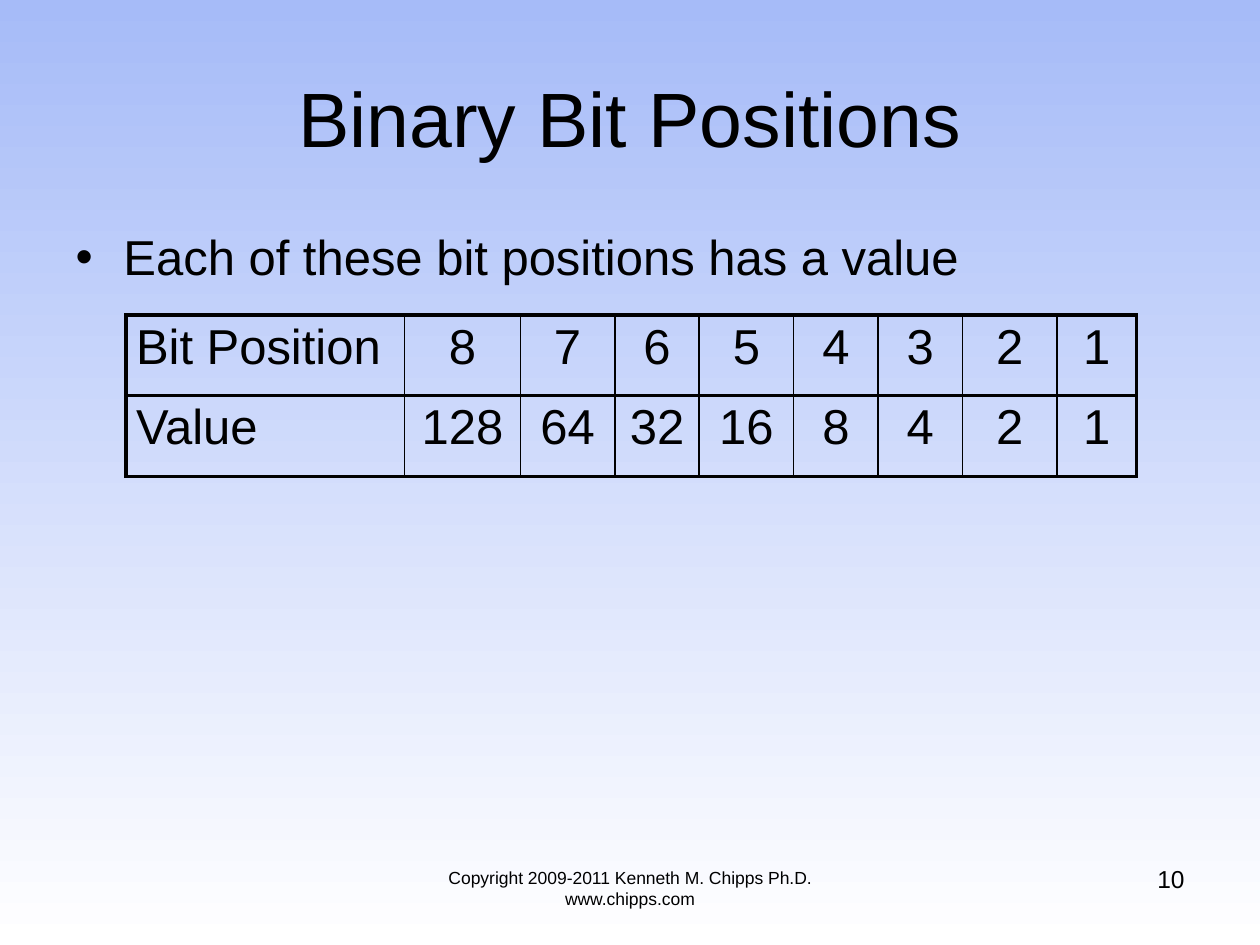
from lxml import etree
from pptx import Presentation
from pptx import util as u
from pptx.dml.color import RGBColor
from pptx.enum import text
from pptx.oxml.ns import qn

ALIGN = text.PP_ALIGN
ANCHOR = text.MSO_ANCHOR
HEAVY, LIGHT = 2.25, 1


def color(value):
    return RGBColor.from_string(value)


def set_attributes(target, values):
    for name, value in values.items():
        setattr(target, name, value)


def place(shape, left, top, width, height):
    set_attributes(shape, {
        "left": u.Inches(left), "top": u.Inches(top),
        "width": u.Inches(width), "height": u.Inches(height),
    })


def add_bullet(para, indent):
    """Give the paragraph a round bullet with a hanging indent."""
    props = para._p.get_or_add_pPr()
    props.set("marL", str(u.Inches(indent)))
    props.set("indent", str(-u.Inches(indent)))
    etree.SubElement(props, qn("a:buChar"), char="•")


def set_borders(cell, widths, ink):
    """Draw the cell borders; widths are points for left, right, top, bottom."""
    props = cell._tc.get_or_add_tcPr()
    for index, (side, width) in enumerate(zip("LRTB", widths)):
        line = etree.Element(qn(f"a:ln{side}"), w=str(u.Pt(width)))
        fill = etree.SubElement(line, qn("a:solidFill"))
        etree.SubElement(fill, qn("a:srgbClr"), val=ink)
        props.insert(index, line)


class SlideBuilder:
    font = "Arial"
    ink = "000000"

    def __init__(self, deck):
        self.page = deck.slides.add_slide(deck.slide_layouts[1])

    def background(self, top, bottom):
        fill = self.page.background.fill
        fill.gradient()
        fill.gradient_angle = 270
        for stop, shade in zip(fill.gradient_stops, (top, bottom)):
            stop.color.rgb = color(shade)

    def add_words(self, frame, words, size, align=ALIGN.LEFT):
        para = frame.paragraphs[0]
        para.alignment = align
        span = para.add_run()
        span.text = words
        set_attributes(span.font, {"name": self.font, "size": u.Pt(size), "bold": False})
        span.font.color.rgb = color(self.ink)
        return para

    def title(self, words, bounds):
        shape = self.page.shapes.title
        place(shape, *bounds)
        shape.text_frame.vertical_anchor = ANCHOR.MIDDLE
        self.add_words(shape.text_frame, words, 44, ALIGN.CENTER)

    def body(self, words, bounds):
        shape = self.page.placeholders[1]
        place(shape, *bounds)
        add_bullet(self.add_words(shape.text_frame, words, 28), 0.38)

    def text_box(self, words, bounds, size, align):
        box = self.page.shapes.add_textbox(*map(u.Inches, bounds))
        box.text_frame.word_wrap = True
        self.add_words(box.text_frame, words, size, align)

    def table(self, rows, left, top, column_widths, row_height):
        frame = self.page.shapes.add_table(
            len(rows), len(column_widths), u.Inches(left), u.Inches(top),
            u.Inches(sum(column_widths)), u.Inches(row_height * len(rows)))
        table = frame.table
        set_attributes(table, {"first_row": False, "horz_banding": False})
        for column, width in zip(table.columns, column_widths):
            column.width = u.Inches(width)
        last = len(column_widths) - 1
        for row, values in zip(table.rows, rows):
            row.height = u.Inches(row_height)
            for index, (cell, value) in enumerate(zip(row.cells, values)):
                set_attributes(cell, {
                    "margin_left": u.Inches(0.08), "margin_right": u.Inches(0.08),
                    "margin_top": u.Inches(0.04), "margin_bottom": u.Inches(0.04),
                })
                self.add_words(cell.text_frame, str(value), 28,
                               ALIGN.CENTER if index else ALIGN.LEFT)
                cell.fill.background()
                left_width = LIGHT if index else HEAVY
                right_width = HEAVY if index == last else LIGHT
                set_borders(cell, (left_width, right_width, HEAVY, HEAVY), self.ink)


def main():
    deck = Presentation()
    set_attributes(deck, {"slide_width": u.Inches(10), "slide_height": u.Inches(7.5)})

    slide = SlideBuilder(deck)
    slide.background("A6BBF8", "FFFFFF")
    slide.title("Binary Bit Positions", (0.5, 0.3, 9, 1.25))
    slide.body("Each of these bit positions has a value", (0.5, 1.75, 8.92, 4.95))

    positions = range(8, 0, -1)
    slide.table(
        [["Bit Position", *positions],
         ["Value", *(2 ** (position - 1) for position in positions)]],
        left=1, top=2.5, row_height=0.64,
        column_widths=[2.21, 0.92, 0.75, 0.67, 0.75, 0.67, 0.67, 0.75, 0.63])

    slide.text_box("Copyright 2009-2011 Kenneth M. Chipps Ph.D. www.chipps.com",
                   (3, 6.83, 4, 0.52), 10, ALIGN.CENTER)
    slide.text_box("10", (7.17, 6.81, 2.33, 0.52), 14, ALIGN.RIGHT)
    deck.save("out.pptx")


if __name__ == "__main__":
    main()
